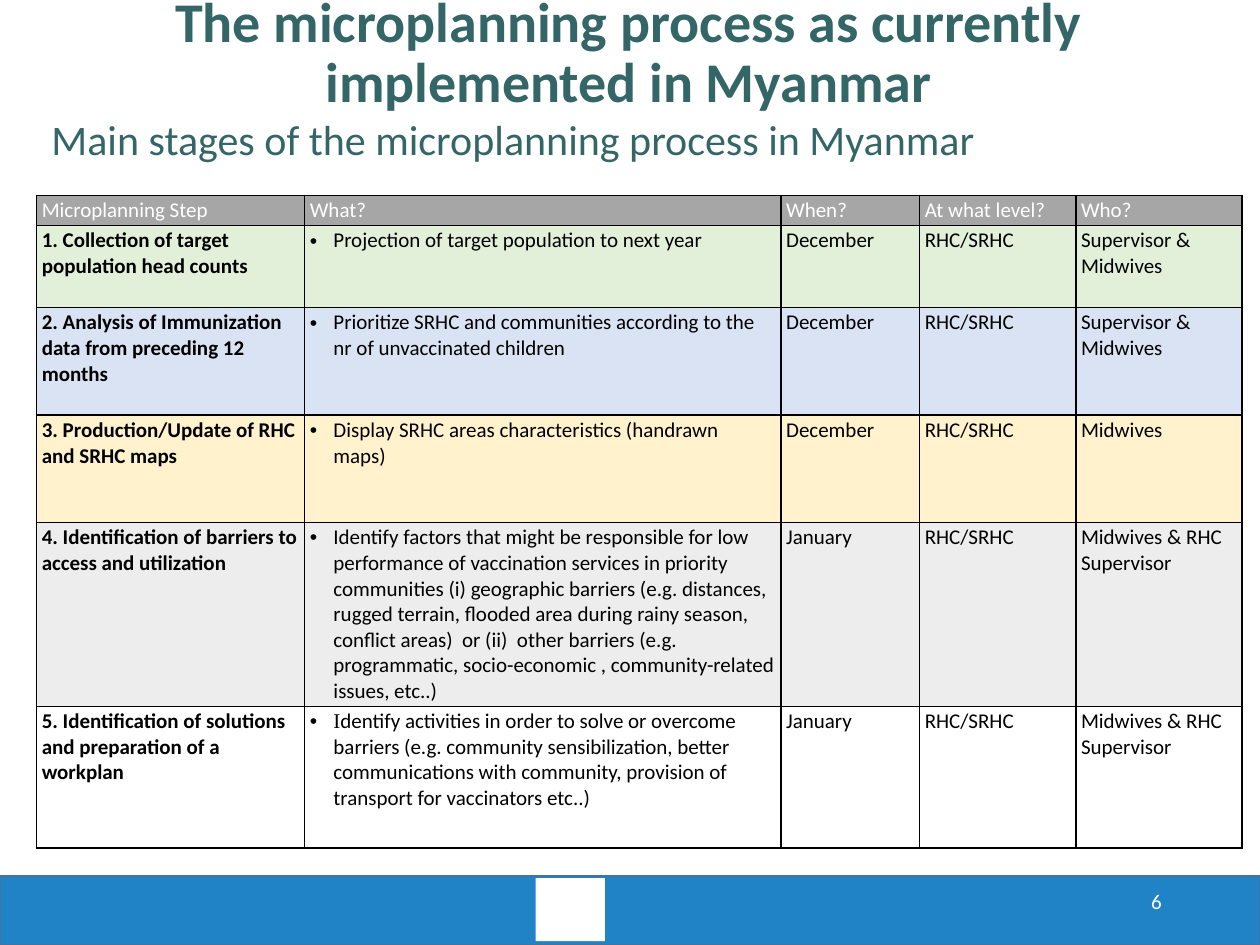
from lxml.etree import SubElement
from pptx import Presentation
from pptx.dml.color import RGBColor
from pptx.enum.shapes import MSO_SHAPE
from pptx.enum.text import MSO_ANCHOR, PP_ALIGN
from pptx.oxml.ns import qn
from pptx.util import Pt

TEAL, WHITE, BLACK = "346667", "FFFFFF", "000000"
TITLE = "The microplanning process as currently implemented in Myanmar"
SUBTITLE = "Main stages of the microplanning process in Myanmar"
HEADER = ["Microplanning Step", "What?", "When?", "At what level?", "Who?"]
# fill, row height, step, what (text runs with their font), when, level, who
STEPS = [
    ("E2F0D9", 46.9, "1. Collection of target population head counts",
     [("Projection of target population to next year", "Calibri")],
     "December", "RHC/SRHC", "Supervisor & Midwives"),
    ("DAE3F3", 61.4, "2. Analysis of Immunization data from preceding 12 months",
     [("Prioritize SRHC and communities according to the nr of "
       "unvaccinated children", "Calibri")],
     "December", "RHC/SRHC", "Supervisor & Midwives"),
    ("FFF2CC", 61.4, "3. Production/Update of RHC and SRHC maps",
     [("Display SRHC areas characteristics (handrawn maps)", "Calibri")],
     "December", "RHC/SRHC", "Midwives"),
    ("EDEDED", 105.1, "4. Identification of barriers to access and utilization",
     [("Identify factors that might be responsible for low performance of "
       "vaccination services in priority communities (i) geographic barriers "
       "(e.g. distances, rugged terrain, flooded area during rainy season, "
       "conflict areas)  or (ii)  other barriers (e.g. programmatic, "
       "socio-economic , community-related issues, etc..)", "Calibri")],
     "January", "RHC/SRHC", "Midwives & RHC Supervisor"),
    (WHITE, 81, "5. Identification of solutions and preparation of a workplan",
     [("I", "Times New Roman"),
      ("dentify activities in order to solve or overcome barriers (e.g. "
       "community sensibilization, better communications with community, "
       "provision of transport for vaccinators etc..)", "Calibri")],
     "January", "RHC/SRHC", "Midwives & RHC Supervisor"),
]
COL_WIDTHS = [153.2, 272.2, 79.2, 89.3, 95.1]
HEADER_HEIGHT = 17.3


def rgb(color):
    return RGBColor.from_string(color)


def add_run(p, text, size, color, bold=False, font="Calibri"):
    r = p.add_run()
    r.text = text
    r.font.name, r.font.size, r.font.bold = font, Pt(size), bold
    r.font.color.rgb = rgb(color)


def add_rect(s, box, fill, line=None):
    sp = s.shapes.add_shape(MSO_SHAPE.RECTANGLE, *map(Pt, box))
    sp.shadow.inherit = False
    sp.fill.solid()
    sp.fill.fore_color.rgb = rgb(fill)
    if line:
        sp.line.color.rgb = rgb(line)
        sp.line.width = Pt(1)
    else:
        sp.line.fill.background()


def add_text(s, box, text, size, color, align, anchor, bold=False, spacing=None):
    tf = s.shapes.add_textbox(*map(Pt, box)).text_frame
    tf.word_wrap = True
    tf.vertical_anchor = anchor
    p = tf.paragraphs[0]
    p.alignment, p.line_spacing = align, spacing
    add_run(p, text, size, color, bold)


def add_bullet(p, indent):
    pPr = p._p.get_or_add_pPr()
    pPr.set("marL", str(Pt(indent)))
    pPr.set("indent", str(-Pt(indent)))
    SubElement(pPr, qn("a:buFont"), typeface="Arial")
    SubElement(pPr, qn("a:buChar"), char="•")


def style_cell(cell, fill):
    """Set margins, a thin black border on every side, and the fill."""
    cell.margin_left = cell.margin_right = Pt(3)
    cell.margin_top = cell.margin_bottom = Pt(1.4)
    tcPr = cell._tc.get_or_add_tcPr()
    for side in ("lnL", "lnR", "lnT", "lnB"):
        ln = SubElement(tcPr, qn(f"a:{side}"), w=str(Pt(1)))
        SubElement(SubElement(ln, qn("a:solidFill")), qn("a:srgbClr"), val=BLACK)
    cell.fill.solid()
    cell.fill.fore_color.rgb = rgb(fill)


def add_steps_table(s, left, top):
    heights = [HEADER_HEIGHT] + [step[1] for step in STEPS]
    table = s.shapes.add_table(len(heights), len(COL_WIDTHS), Pt(left), Pt(top),
                               Pt(sum(COL_WIDTHS)), Pt(sum(heights))).table
    for col, width in zip(table.columns, COL_WIDTHS):
        col.width = Pt(width)
    for row, height in zip(table.rows, heights):
        row.height = Pt(height)
    for cell, text in zip(table.rows[0].cells, HEADER):
        style_cell(cell, "A6A6A6")
        add_run(cell.text_frame.paragraphs[0], text, 12, WHITE)
    for i, (fill, _, *contents) in enumerate(STEPS, 1):
        for j, content in enumerate(contents):
            cell = table.cell(i, j)
            style_cell(cell, fill)
            p = cell.text_frame.paragraphs[0]
            if j == 1:
                add_bullet(p, 13.5)
                for text, font in content:
                    add_run(p, text, 12, BLACK, font=font)
            else:
                add_run(p, content, 12, BLACK, bold=j == 0)


prs = Presentation()
prs.slide_width, prs.slide_height = Pt(720), Pt(540)
s = prs.slides.add_slide(prs.slide_layouts[6])

add_rect(s, (0, 500.4, 720, 39.6), "1F83C5", "43739E")
add_rect(s, (306, 501.8, 39.6, 36), WHITE)
add_text(s, (509, 500.4, 162, 28.8), "6", 12, WHITE, PP_ALIGN.RIGHT, MSO_ANCHOR.MIDDLE)
add_steps_table(s, 20.9, 111.6)
add_text(s, (49, 0, 620.6, 61.9), TITLE, 32, TEAL, PP_ALIGN.CENTER,
         MSO_ANCHOR.MIDDLE, bold=True, spacing=0.9)
add_text(s, (22.3, 64.8, 676, 34.6), SUBTITLE, 24, TEAL, PP_ALIGN.LEFT,
         MSO_ANCHOR.TOP, spacing=0.9)

prs.save("out.pptx")
